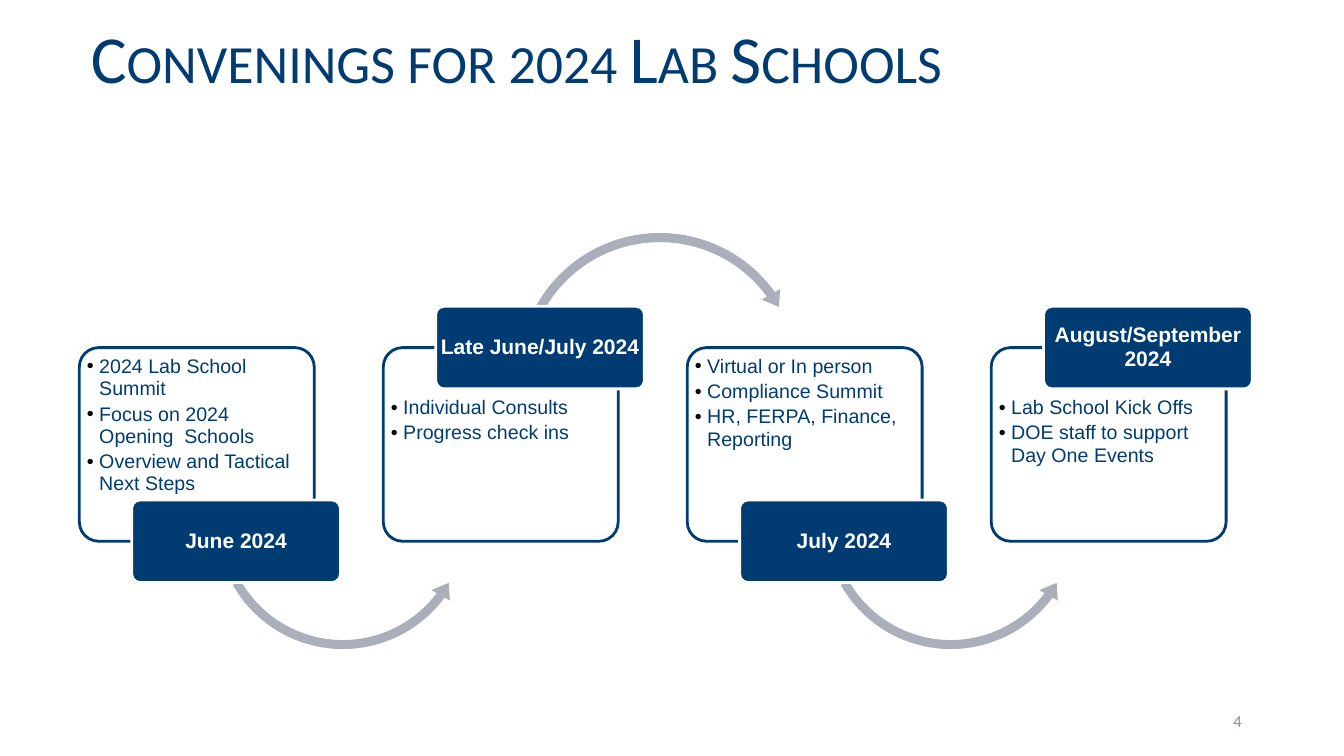
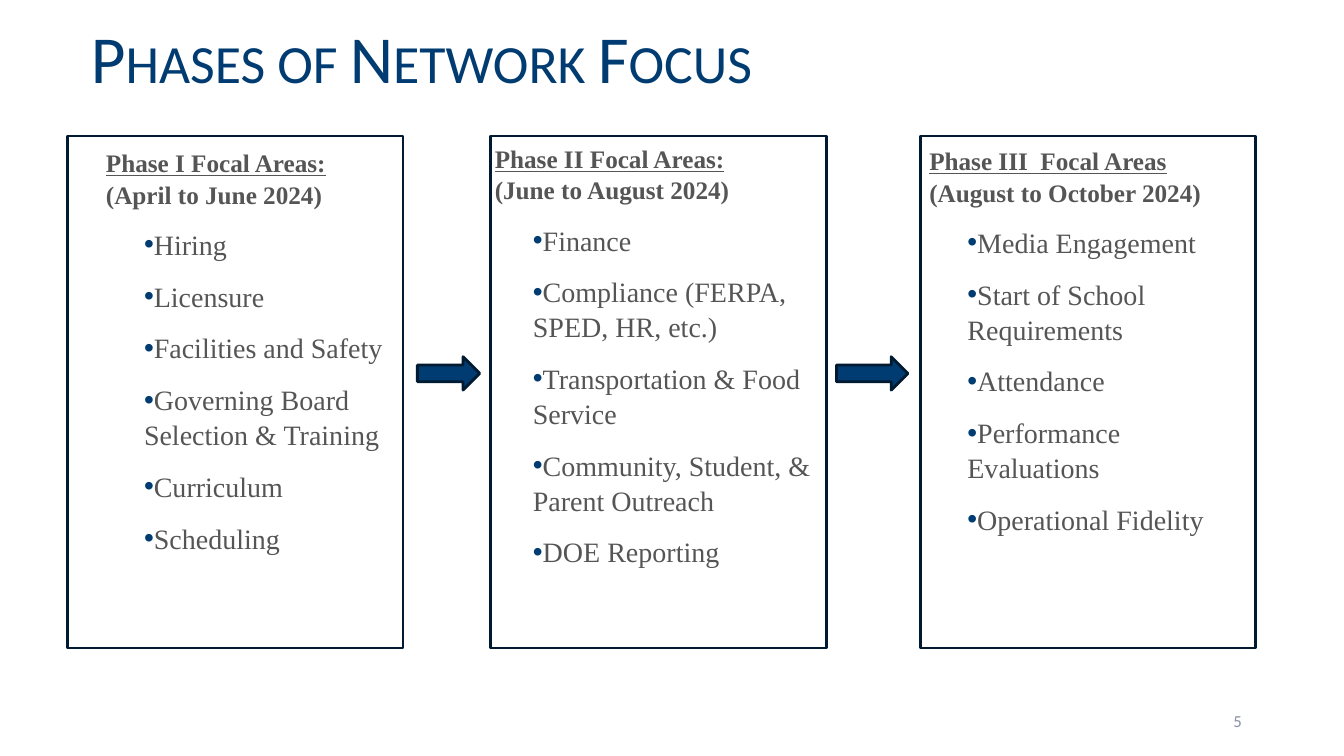
from dataclasses import dataclass

from lxml import etree
from pptx import Presentation
from pptx.dml.color import RGBColor
from pptx.enum.shapes import MSO_SHAPE
from pptx.enum.text import MSO_ANCHOR, MSO_AUTO_SIZE, PP_ALIGN
from pptx.oxml.ns import qn
from pptx.util import Cm, Pt

ROUNDED, RECTANGLE = MSO_SHAPE.ROUNDED_RECTANGLE, MSO_SHAPE.RECTANGLE
ARC_OVER, ARC_UNDER = MSO_SHAPE.CIRCULAR_ARROW, MSO_SHAPE.LEFT_CIRCULAR_ARROW
RIGHT_ARROW = MSO_SHAPE.RIGHT_ARROW
TOP, MIDDLE, BOTTOM = MSO_ANCHOR.TOP, MSO_ANCHOR.MIDDLE, MSO_ANCHOR.BOTTOM
LEFT, CENTER, RIGHT = PP_ALIGN.LEFT, PP_ALIGN.CENTER, PP_ALIGN.RIGHT
NO_AUTOFIT = MSO_AUTO_SIZE.NONE

NAVY = RGBColor(0x00, 0x3C, 0x71)
DARK_NAVY = RGBColor(0x00, 0x1A, 0x32)
ARC_GRAY = RGBColor(0xAB, 0xAF, 0xBB)
NUMBER_GRAY = RGBColor(0x88, 0x8F, 0xA3)
TEXT_GRAY = RGBColor(0x55, 0x55, 0x55)
WHITE = RGBColor(0xFF, 0xFF, 0xFF)
BLACK = RGBColor(0x00, 0x00, 0x00)

TITLE_ONLY = 5
SLIDE_WIDTH, SLIDE_HEIGHT = Cm(33.87), Cm(19.05)

CARD_LEFT, CARD_TOP, CARD_PITCH = 2.0, 8.76, 7.66
CARD_WIDTH, CARD_HEIGHT = 5.92, 4.88
LABEL_SHIFT, LABEL_WIDTH, LABEL_HEIGHT = 1.32, 5.26, 2.08

PANEL_TOP, PANEL_WIDTH, PANEL_HEIGHT = 3.43, 8.46, 12.9


@dataclass(frozen=True)
class Convening:
    date: str
    points: tuple[str, ...]


@dataclass(frozen=True)
class CardStyle:
    """Where a card's label and outgoing arc sit; arc adjustments are in percent."""
    label_top: float
    text_inset_top: float
    arc: MSO_SHAPE
    arc_shift: float
    arc_top: float
    arc_size: float
    arc_adjustments: tuple[float, ...]


@dataclass(frozen=True)
class Phase:
    heading: str
    period: str
    topics: tuple[str, ...]
    panel_left: float
    text_left: float
    text_top: float
    text_width: float


@dataclass(frozen=True)
class PhaseArrow:
    left: float
    width: float


LABEL_BELOW = CardStyle(12.6, 0.06, ARC_UNDER, 3.3, 9.83, 6.68,
                        (3.4, 422, 2197.6, 9024.5, 4))
LABEL_ABOVE = CardStyle(7.72, 1.1, ARC_OVER, 3.25, 5.72, 7.44,
                        (3.1, 376.1, 19448.3, 12575.5, 3.6))

CONVENINGS = (
    Convening("June 2024", ("2024 Lab School Summit",
                            "Focus on 2024 Opening  Schools",
                            "Overview and Tactical Next Steps")),
    Convening("Late June/July 2024", ("Individual Consults", "Progress check ins")),
    Convening("July 2024", ("Virtual or In person", "Compliance Summit",
                            "HR, FERPA, Finance, Reporting")),
    Convening("August/September 2024", ("Lab School Kick Offs",
                                        "DOE staff to support Day One Events")),
)

PHASES = (
    Phase("Phase I Focal Areas:", "(April to June 2024)",
          ("Hiring", "Licensure", "Facilities and Safety",
           "Governing Board Selection & Training", "Curriculum", "Scheduling"),
          1.7, 2.11, 3.56, 9.32),
    Phase("Phase II Focal Areas:", "(June to August 2024)",
          ("Finance", "Compliance (FERPA, SPED, HR, etc.)",
           "Transportation & Food Service",
           "Community, Student, & Parent Outreach", "DOE Reporting"),
          12.37, 11.91, 3.45, 9.32),
    Phase("Phase III  Focal Areas", "(August to October 2024)",
          ("Media Engagement", "Start of School Requirements", "Attendance",
           "Performance Evaluations", "Operational Fidelity"),
          23.19, 22.86, 3.51, 9.02),
)

PHASE_ARROWS = (PhaseArrow(10.52, 1.57), PhaseArrow(21.08, 1.8))


def set_font(paragraph, name: str, size: float, color: RGBColor, bold: bool = False) -> None:
    font = paragraph.font
    font.name, font.size, font.bold = name, Pt(size), bold
    font.color.rgb = color


def set_indent(paragraph, margin: float, first_line: float = 0) -> None:
    properties = paragraph._p.get_or_add_pPr()
    properties.set("marL", str(Cm(margin)))
    properties.set("indent", str(Cm(first_line)))


def add_bullet(paragraph, color: RGBColor) -> None:
    """Give the paragraph a bullet; call before its font is set."""
    properties = paragraph._p.get_or_add_pPr()
    bullet_color = etree.SubElement(properties, qn("a:buClr"))
    etree.SubElement(bullet_color, qn("a:srgbClr"), val=str(color))
    etree.SubElement(properties, qn("a:buFont"), typeface="Arial")
    etree.SubElement(properties, qn("a:buChar"), char="•")


def set_frame(frame, anchor: MSO_ANCHOR, left: float = 0.25, top: float = 0.13,
              right: float = 0.25, bottom: float = 0.13) -> None:
    frame.word_wrap = True
    frame.auto_size = NO_AUTOFIT
    frame.vertical_anchor = anchor
    frame.margin_left, frame.margin_top = Cm(left), Cm(top)
    frame.margin_right, frame.margin_bottom = Cm(right), Cm(bottom)


def next_paragraph(frame, index: int):
    return frame.add_paragraph() if index else frame.paragraphs[0]


def add_shape(slide, kind: MSO_SHAPE, left: float, top: float, width: float, height: float,
              fill: RGBColor | None = None, line: RGBColor | None = None):
    shape = slide.shapes.add_shape(kind, Cm(left), Cm(top), Cm(width), Cm(height))
    shape.shadow.inherit = False
    if fill is None:
        shape.fill.background()
    else:
        shape.fill.solid()
        shape.fill.fore_color.rgb = fill
    if line is None:
        shape.line.fill.background()
    else:
        shape.line.color.rgb = line
        shape.line.width = Pt(2)
    return shape


def add_text_frame(slide, left: float, top: float, width: float, height: float,
                   anchor: MSO_ANCHOR):
    box = slide.shapes.add_textbox(Cm(left), Cm(top), Cm(width), Cm(height))
    set_frame(box.text_frame, anchor)
    return box.text_frame


def add_titled_slide(presentation, title_text: str, number: int):
    slide = presentation.slides.add_slide(presentation.slide_layouts[TITLE_ONLY])
    title = slide.shapes.title
    title.left, title.top, title.width, title.height = 0, 0, SLIDE_WIDTH, Cm(2.59)
    set_frame(title.text_frame, BOTTOM, left=2.29)
    heading = title.text_frame.paragraphs[0]
    heading.text = title_text
    heading.alignment = LEFT
    heading.line_spacing = 0.9
    set_font(heading, "Calibri", 48, NAVY)
    heading._p.pPr.find(qn("a:defRPr")).set("cap", "small")

    page = add_text_frame(slide, 23.93, 17.65, 7.62, 1.02, MIDDLE).paragraphs[0]
    page.text = str(number)
    page.alignment = RIGHT
    set_font(page, "Calibri", 12, NUMBER_GRAY)
    return slide


def add_convening(slide, convening: Convening, left: float, style: CardStyle,
                  has_next: bool) -> None:
    card = add_shape(slide, ROUNDED, left, CARD_TOP, CARD_WIDTH, CARD_HEIGHT, WHITE, NAVY)
    card.adjustments[0] = 0.1
    set_frame(card.text_frame, TOP, 0.05, style.text_inset_top, 0.05, 0.05)
    for index, point in enumerate(convening.points):
        paragraph = next_paragraph(card.text_frame, index)
        paragraph.text = point
        paragraph.alignment = LEFT
        paragraph.line_spacing = 0.95
        paragraph.space_after = Pt(2)
        set_indent(paragraph, 0.31, -0.31)
        add_bullet(paragraph, BLACK)
        set_font(paragraph, "Arial", 14, NAVY)

    if has_next:
        arc = add_shape(slide, style.arc, left + style.arc_shift, style.arc_top,
                        style.arc_size, style.arc_size, ARC_GRAY)
        for index, percent in enumerate(style.arc_adjustments):
            arc.adjustments[index] = percent / 100

    label = add_shape(slide, ROUNDED, left + LABEL_SHIFT, style.label_top,
                      LABEL_WIDTH, LABEL_HEIGHT, NAVY, WHITE)
    label.adjustments[0] = 0.1
    set_frame(label.text_frame, MIDDLE, 0.05, 0.05, 0.05, 0.05)
    date = label.text_frame.paragraphs[0]
    date.text = convening.date
    date.alignment = CENTER
    date.line_spacing = 0.95
    set_font(date, "Arial", 15, WHITE, bold=True)


def add_phase(slide, phase: Phase) -> None:
    add_shape(slide, RECTANGLE, phase.panel_left, PANEL_TOP, PANEL_WIDTH, PANEL_HEIGHT,
              line=DARK_NAVY)
    frame = add_text_frame(slide, phase.text_left, phase.text_top, phase.text_width, 15.4, TOP)
    heading = frame.paragraphs[0]
    title_run = heading.add_run()
    title_run.text = phase.heading
    title_run.font.underline = True
    heading.add_line_break()
    heading.add_run().text = phase.period
    set_indent(heading, 0.31)
    set_font(heading, "Times New Roman", 18, TEXT_GRAY, bold=True)
    for topic in phase.topics:
        paragraph = frame.add_paragraph()
        paragraph.text = topic
        set_indent(paragraph, 1.27)
        add_bullet(paragraph, NAVY)
        set_font(paragraph, "Times New Roman", 20, TEXT_GRAY)
    for paragraph in frame.paragraphs:
        paragraph.line_spacing = 1.04
        paragraph.space_before = paragraph.space_after = Pt(6)


def build_convenings(presentation) -> None:
    slide = add_titled_slide(presentation, "Convenings for 2024 Lab Schools", 4)
    for index, convening in enumerate(CONVENINGS):
        add_convening(slide, convening, CARD_LEFT + index * CARD_PITCH,
                      LABEL_ABOVE if index % 2 else LABEL_BELOW,
                      has_next=index < len(CONVENINGS) - 1)


def build_phases(presentation) -> None:
    slide = add_titled_slide(presentation, "Phases of Network Focus", 5)
    for phase in PHASES:
        add_phase(slide, phase)
    for arrow in PHASE_ARROWS:
        add_shape(slide, RIGHT_ARROW, arrow.left, 8.99, arrow.width, 0.84, NAVY, DARK_NAVY)


def main() -> None:
    presentation = Presentation()
    presentation.slide_width, presentation.slide_height = SLIDE_WIDTH, SLIDE_HEIGHT
    build_convenings(presentation)
    build_phases(presentation)
    presentation.save("out.pptx")


if __name__ == "__main__":
    main()
